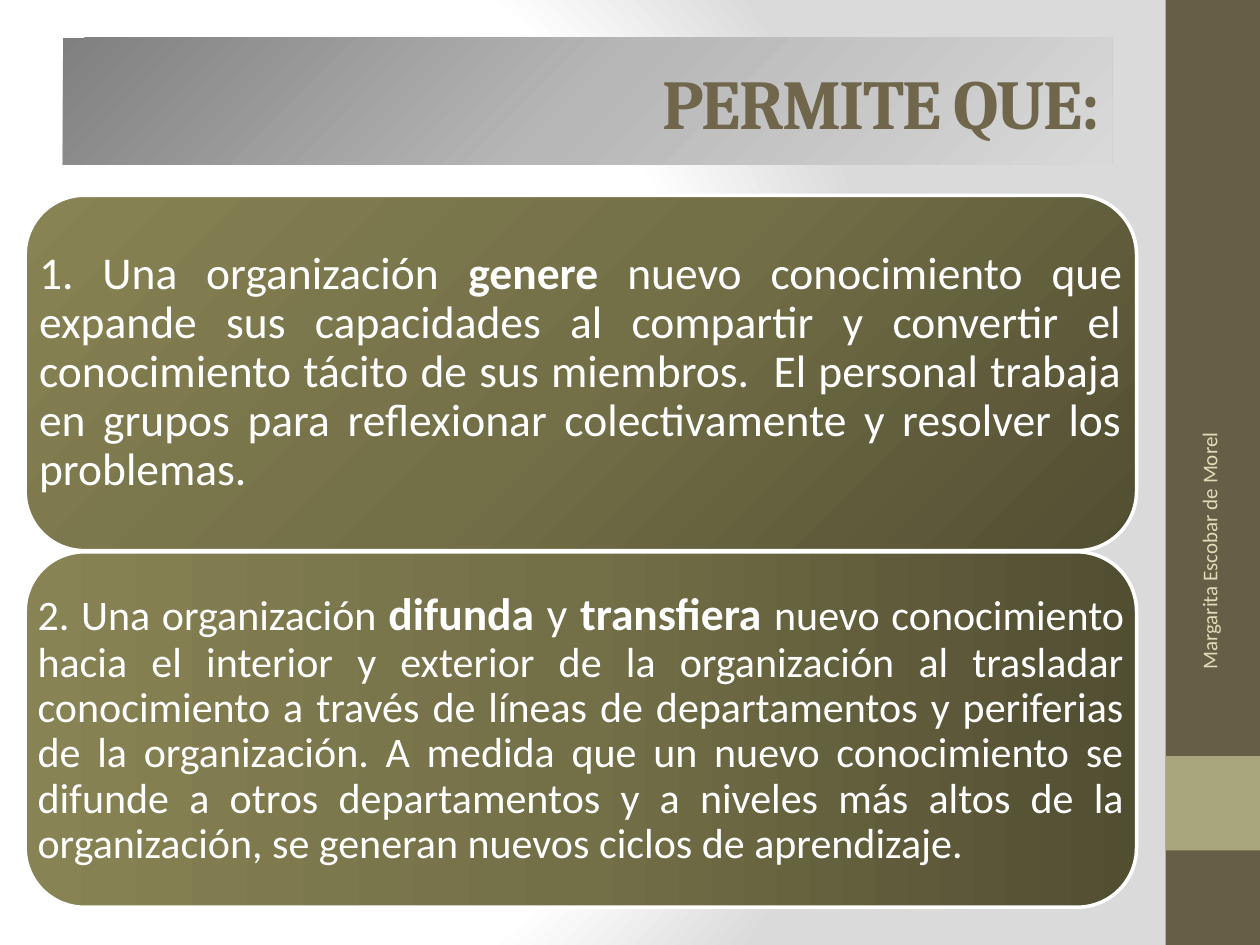
from lxml.etree import SubElement
from pptx import Presentation
from pptx.dml.color import RGBColor
from pptx.enum.shapes import MSO_SHAPE
from pptx.enum.text import MSO_ANCHOR, PP_ALIGN
from pptx.oxml.ns import qn
from pptx.util import Inches, Pt

BROWN = RGBColor(0x67, 0x5E, 0x47)
SAGE = RGBColor(0xA9, 0xA5, 0x7C)
TITLE_BROWN = RGBColor(0x6F, 0x66, 0x4C)
CREAM = RGBColor(0xDF, 0xDC, 0xB7)
WHITE = RGBColor(0xFF, 0xFF, 0xFF)
PALE_GREY = RGBColor(0xDA, 0xDA, 0xDA)
TITLE_STOPS = [(0, RGBColor(0x80, 0x80, 0x80)), (50, RGBColor(0xB7, 0xB7, 0xB7)),
               (100, RGBColor(0xD9, 0xD9, 0xD9))]
OLIVE_STOPS = [(0, RGBColor(0x51, 0x4E, 0x32)), (50, RGBColor(0x73, 0x6F, 0x47)),
               (100, RGBColor(0x88, 0x83, 0x54))]


def set_gradient(fill, owner, stops, angle=None, focus=None):
    """Linear gradient at an angle, or circular around a focus (l, t, r, b in %)."""
    fill.gradient()
    gradient = next(owner.iter(qn("a:gradFill")))
    for child in list(gradient):
        gradient.remove(child)
    stop_list = SubElement(gradient, qn("a:gsLst"))
    for position, color in stops:
        stop = SubElement(stop_list, qn("a:gs"), pos=str(position * 1000))
        SubElement(stop, qn("a:srgbClr"), val=str(color))
    if focus:
        circle = SubElement(gradient, qn("a:path"), path="circle")
        SubElement(circle, qn("a:fillToRect"),
                   {side: str(value * 1000) for side, value in zip("ltrb", focus)})
    else:
        SubElement(gradient, qn("a:lin"), ang=str(angle * 60000), scaled="0")


def write(frame, runs, font, color, align, inset=None):
    """Fill a text frame with one paragraph of (text, size, bold) runs."""
    frame.word_wrap = True
    frame.vertical_anchor = MSO_ANCHOR.MIDDLE
    if inset is not None:
        frame.margin_left = frame.margin_right = Inches(inset)
        frame.margin_top = frame.margin_bottom = Inches(inset)
    paragraph = frame.paragraphs[0]
    paragraph.alignment = align
    for text, size, bold in runs:
        run = paragraph.add_run()
        run.text = text
        run.font.name = font
        run.font.size = Pt(size)
        run.font.bold = bold
        run.font.color.rgb = color
    return paragraph


prs = Presentation()
prs.slide_width, prs.slide_height = Inches(10), Inches(7.5)
slide = prs.slides.add_slide(prs.slide_layouts[6])
shapes = slide.shapes

# Background
set_gradient(slide.background.fill, slide.element,
             [(0, WHITE), (75, WHITE), (100, PALE_GREY)], focus=(20, 50, 100, 50))

# Side band with its accent square
for top, height, color in [(0, 7.5, BROWN), (6, 0.75, SAGE)]:
    band = shapes.add_shape(MSO_SHAPE.RECTANGLE, Inches(9.25), Inches(top),
                            Inches(0.75), Inches(height))
    band.shadow.inherit = False
    band.fill.solid()
    band.fill.fore_color.rgb = color
    band.line.fill.background()

# Title bar
title = shapes.add_shape(MSO_SHAPE.RECTANGLE, Inches(0.5), Inches(0.3),
                         Inches(8.33), Inches(1.01))
title.shadow.inherit = False
title.line.fill.background()
set_gradient(title.fill, title.element, TITLE_STOPS, angle=45)
heading = write(title.text_frame, [("PERMITE QUE:", 40, True)],
                "Cambria", TITLE_BROWN, PP_ALIGN.RIGHT)
heading.runs[0].font._element.set("spc", "-100")

# Two statement cards, one below the other
statements = [
    (1.55, 0.11, {"focus": (100, 100, 0, 0)}, [
        ("1. Una organización ", 26, False),
        ("genere", 26, True),
        (" nuevo conocimiento que expande sus capacidades al compartir y convertir "
         "el conocimiento tácito de sus miembros.  El personal trabaja en grupos para "
         "reflexionar colectivamente y resolver los problemas.", 26, False)]),
    (4.38, 0.1, {"angle": 180}, [
        ("2. Una organización ", 24, False),
        ("difunda", 26, True),
        (" y ", 26, False),
        ("transfiera ", 26, True),
        ("nuevo conocimiento hacia el interior y exterior de la organización al "
         "trasladar conocimiento a través de líneas de departamentos y periferias de "
         "la organización. A medida que un nuevo conocimiento se difunde a otros "
         "departamentos y a niveles más altos de la organización, se generan nuevos "
         "ciclos de aprendizaje. ", 24, False)]),
]
for top, inset, direction, runs in statements:
    area = Inches(0.2), Inches(top), Inches(8.82), Inches(2.82)
    card = shapes.add_shape(MSO_SHAPE.ROUNDED_RECTANGLE, *area)
    card.shadow.inherit = False
    set_gradient(card.fill, card.element, OLIVE_STOPS, **direction)
    card.line.color.rgb = WHITE
    card.line.width = Pt(2)
    statement = shapes.add_textbox(*area)
    paragraph = write(statement.text_frame, runs, "Calibri", WHITE,
                      PP_ALIGN.JUSTIFY, inset)
    paragraph.line_spacing = 0.9

# Author, running up the side band
author = shapes.add_textbox(Inches(8.3), Inches(4.43), Inches(2.59), Inches(0.4))
author.rotation = 270
write(author.text_frame, [("Margarita Escobar de Morel", 12, False)],
      "Calibri", CREAM, PP_ALIGN.RIGHT)

prs.save("out.pptx")
